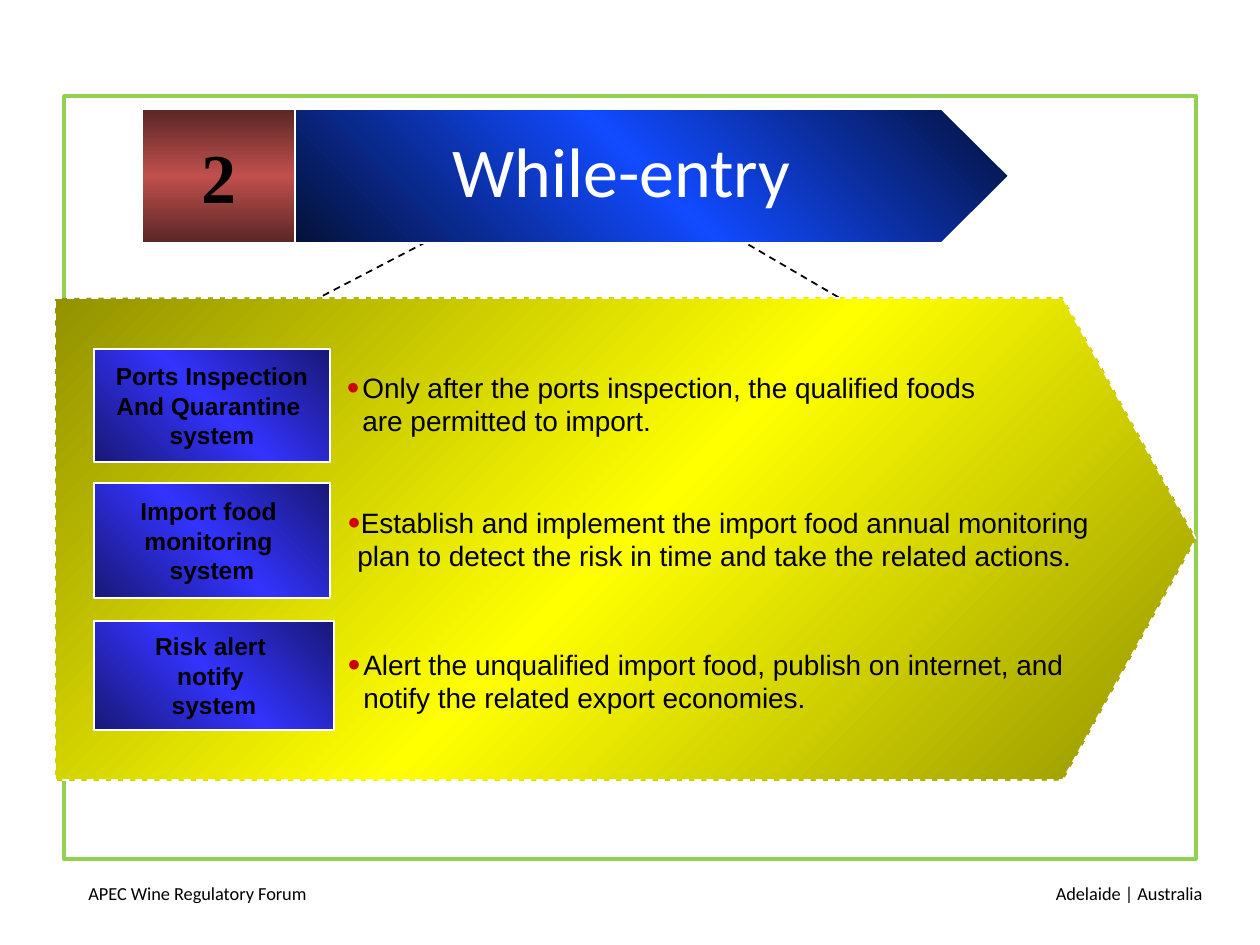
from dataclasses import dataclass

from lxml.etree import SubElement
from pptx import Presentation
from pptx.dml.color import RGBColor
from pptx.enum.dml import MSO_LINE
from pptx.enum.shapes import MSO_CONNECTOR, MSO_SHAPE
from pptx.enum.text import MSO_ANCHOR, PP_ALIGN
from pptx.oxml.ns import qn
from pptx.util import Emu, Pt

EMU_PER_INCH = 914400
PX_PER_INCH = 126


@dataclass(frozen=True)
class Box:
    left: int
    top: int
    width: int
    height: int


@dataclass(frozen=True)
class Gradient:
    edge: str
    middle: str
    angle: int


@dataclass(frozen=True)
class TextStyle:
    font: str
    size: float
    color: str
    bold: bool = False


@dataclass(frozen=True)
class Theme:
    white: str = "FFFFFF"
    black: str = "000000"
    frame: str = "92D050"
    bullet: str = "CC0000"
    banner: Gradient = Gradient("041139", "114AFF", 315)
    number_fill: Gradient = Gradient("5A2624", "C0504D", 90)
    panel: Gradient = Gradient("929200", "FFFF00", 45)
    label_fill: Gradient = Gradient("181876", "3333FF", 315)
    title: TextStyle = TextStyle("Calibri", 40, "FFFFFF")
    number: TextStyle = TextStyle("Times New Roman", 40, "000000", True)
    label: TextStyle = TextStyle("Arial", 14, "000000", True)
    body: TextStyle = TextStyle("Arial", 16, "000000")
    footer: TextStyle = TextStyle("Calibri", 10.5, "000000")


@dataclass(frozen=True)
class Measure:
    label_box: Box
    label_lines: tuple[str, ...]
    text_box: Box
    text: str
    indent: int = 16


THEME = Theme()
BULLET_HANG = 16
MEASURES = (
    Measure(Box(94, 349, 236, 113), ("Ports Inspection", "And Quarantine ", "system"),
            Box(334, 364, 699, 78),
            "Only after the ports inspection, the qualified foods are permitted to import."),
    Measure(Box(94, 483, 236, 115), ("Import food ", "monitoring ", "system"),
            Box(335, 499, 767, 122),
            "Establish and implement the import food annual monitoring plan to detect "
            "the risk in time and take the related actions.", 10),
    Measure(Box(94, 621, 240, 109), ("Risk alert ", "notify ", "system"),
            Box(335, 641, 790, 110),
            "Alert the unqualified import food, publish on internet, and notify the "
            "related export economies."),
)


def px(length: int) -> Emu:
    return Emu(round(length * EMU_PER_INCH / PX_PER_INCH))


def place(box: Box) -> tuple[Emu, Emu, Emu, Emu]:
    return px(box.left), px(box.top), px(box.width), px(box.height)


def set_gradient(shape, gradient: Gradient) -> None:
    shape.fill.gradient()
    fill = shape._element.spPr.find(qn("a:gradFill"))
    for child in list(fill):
        fill.remove(child)
    stops = SubElement(fill, qn("a:gsLst"))
    for position, color in ((0, gradient.edge), (50, gradient.middle), (100, gradient.edge)):
        stop = SubElement(stops, qn("a:gs"), pos=str(position * 1000))
        SubElement(stop, qn("a:srgbClr"), val=color)
    SubElement(fill, qn("a:lin"), ang=str(gradient.angle * 60000), scaled="0")


def add_block(slide, kind: MSO_SHAPE, box: Box, line: str, gradient: Gradient | None = None,
              line_width: float = 1, point: float | None = None):
    shape = slide.shapes.add_shape(kind, *place(box))
    shape.shadow.inherit = False
    if gradient:
        set_gradient(shape, gradient)
    else:
        shape.fill.background()
    shape.line.color.rgb = RGBColor.from_string(line)
    shape.line.width = Pt(line_width)
    if point is not None:
        shape.adjustments[0] = point
    return shape


def write_run(paragraph, text: str, style: TextStyle) -> None:
    run = paragraph.add_run()
    run.text = text
    run.font.name = style.font
    run.font.size = Pt(style.size)
    run.font.bold = style.bold
    run.font.color.rgb = RGBColor.from_string(style.color)


def write_centered(shape, lines: tuple[str, ...], style: TextStyle) -> None:
    frame = shape.text_frame
    frame.word_wrap = False
    frame.vertical_anchor = MSO_ANCHOR.MIDDLE
    for index, line in enumerate(lines):
        paragraph = frame.add_paragraph() if index else frame.paragraphs[0]
        paragraph.alignment = PP_ALIGN.CENTER
        write_run(paragraph, line, style)


def add_text(slide, box: Box, text: str, style: TextStyle,
             alignment: PP_ALIGN = PP_ALIGN.LEFT, bullet_indent: int | None = None) -> None:
    frame = slide.shapes.add_textbox(*place(box)).text_frame
    frame.word_wrap = True
    paragraph = frame.paragraphs[0]
    paragraph.alignment = alignment
    if bullet_indent is not None:
        add_bullet(paragraph, bullet_indent)
    write_run(paragraph, text, style)


def add_bullet(paragraph, indent: int) -> None:
    properties = paragraph._p.get_or_add_pPr()
    properties.set("marL", str(px(indent)))
    properties.set("indent", str(-px(BULLET_HANG)))
    color = SubElement(properties, qn("a:buClr"))
    SubElement(color, qn("a:srgbClr"), val=THEME.bullet)
    SubElement(properties, qn("a:buSzPct"), val="80000")
    SubElement(properties, qn("a:buFont"), typeface=THEME.body.font)
    SubElement(properties, qn("a:buChar"), char="●")


def add_dashed_line(slide, start: tuple[int, int], end: tuple[int, int]) -> None:
    connector = slide.shapes.add_connector(
        MSO_CONNECTOR.STRAIGHT, *(px(value) for value in start + end))
    connector.line.color.rgb = RGBColor.from_string(THEME.black)
    connector.line.width = Pt(1)
    connector.line.dash_style = MSO_LINE.DASH
    SubElement(connector._element.spPr, qn("a:effectLst"))


def add_measure(slide, measure: Measure) -> None:
    label = add_block(slide, MSO_SHAPE.RECTANGLE, measure.label_box, THEME.white,
                      THEME.label_fill)
    write_centered(label, measure.label_lines, THEME.label)
    add_text(slide, measure.text_box, measure.text, THEME.body, bullet_indent=measure.indent)


def main() -> None:
    presentation = Presentation()
    presentation.slide_width = px(1260)
    presentation.slide_height = px(945)
    slide = presentation.slides.add_slide(presentation.slide_layouts[6])

    add_text(slide, Box(76, 876, 296, 50), "APEC Wine Regulatory Forum", THEME.footer)
    add_block(slide, MSO_SHAPE.RECTANGLE, Box(64, 96, 1132, 763), THEME.frame, line_width=2)
    add_text(slide, Box(919, 876, 296, 50), "Adelaide | Australia", THEME.footer,
             PP_ALIGN.RIGHT)

    add_dashed_line(slide, (480, 214), (186, 367))
    add_dashed_line(slide, (696, 214), (968, 373))
    panel = add_block(slide, MSO_SHAPE.PENTAGON, Box(55, 298, 1141, 482), THEME.white,
                      THEME.panel, point=0.276)
    panel.line.dash_style = MSO_LINE.DASH

    for measure in MEASURES:
        add_measure(slide, measure)

    add_block(slide, MSO_SHAPE.PENTAGON, Box(295, 109, 714, 134), THEME.white,
              THEME.banner, point=0.503)
    number = add_block(slide, MSO_SHAPE.RECTANGLE, Box(142, 109, 153, 134), THEME.white,
                       THEME.number_fill)
    write_centered(number, ("2",), THEME.number)
    add_text(slide, Box(392, 121, 459, 98), "While-entry", THEME.title, PP_ALIGN.CENTER)

    presentation.save("out.pptx")


if __name__ == "__main__":
    main()
